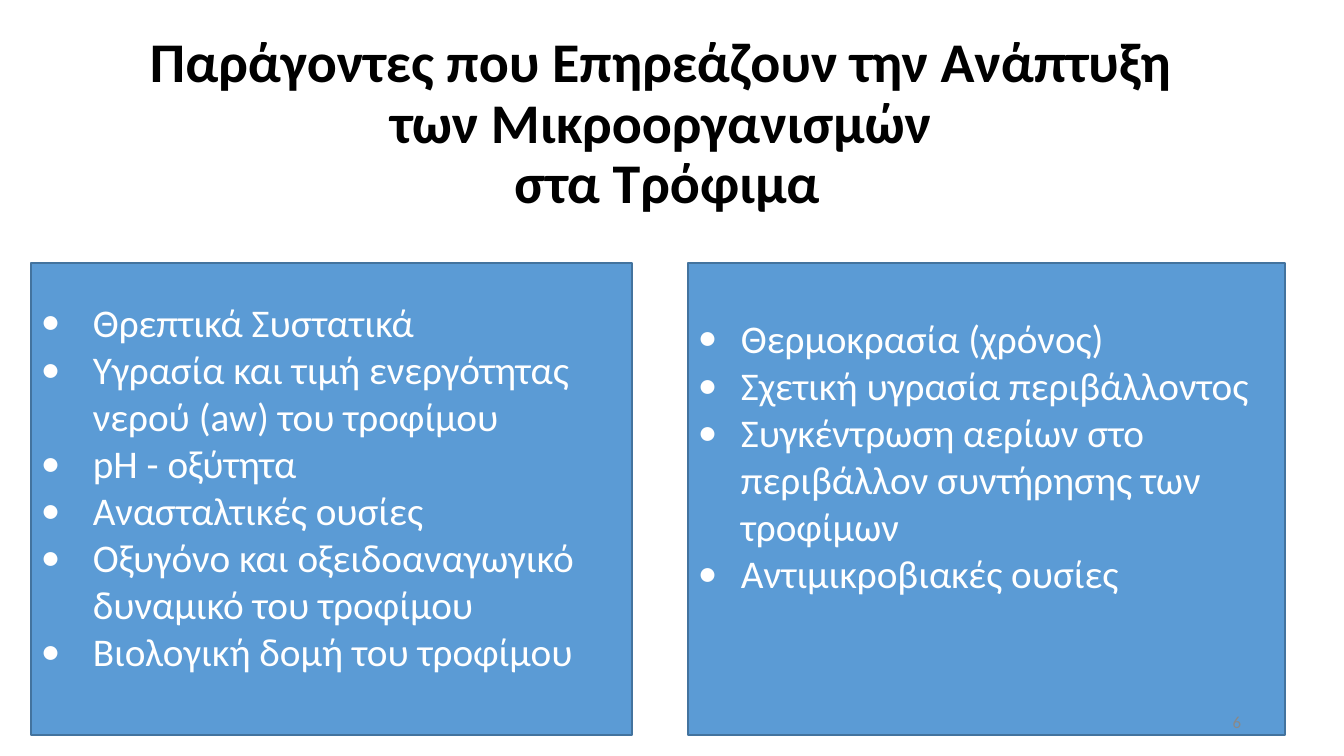
"""Build the slide on factors that affect microbial growth in foods."""
from lxml.etree import SubElement
from pptx import Presentation
from pptx.dml.color import RGBColor
from pptx.enum.shapes import MSO_SHAPE
from pptx.enum.text import MSO_ANCHOR, PP_ALIGN
from pptx.oxml.ns import qn
from pptx.util import Pt

PX = 9144000 // 1008
FONT = "Calibri"
COLORS = {"title": "000000", "panel": "5B9BD5", "edge": "43739E",
          "factor": "FFFFFF", "number": "898989"}

TITLE = ("Παράγοντες που Επηρεάζουν την Ανάπτυξη \v"
         "των Μικροοργανισμών \vστα Τρόφιμα")
PAGE_NUMBER = "6"
PANEL_TOP, PANEL_HEIGHT = 263, 472
PANELS = [
    {"left": 31, "width": 601, "inset": 35, "indent": 52, "factors": [
        "Θρεπτικά Συστατικά",
        "Υγρασία και τιμή ενεργότητας\vνερού (aw) του τροφίμου",
        "pH - οξύτητα",
        "Ανασταλτικές ουσίες",
        "Οξυγόνο και οξειδοαναγωγικό\vδυναμικό του τροφίμου",
        "Βιολογική δομή του τροφίμου"]},
    {"left": 688, "width": 597, "inset": 51, "indent": 43, "factors": [
        "Θερμοκρασία (χρόνος)",
        "Σχετική υγρασία περιβάλλοντος",
        "Συγκέντρωση αερίων στο\vπεριβάλλον συντήρησης των\vτροφίμων",
        "Αντιμικροβιακές ουσίες"]},
]


def color(name):
    return RGBColor.from_string(COLORS[name])


def style(paragraph, size, name, align, bold=False):
    paragraph.alignment = align
    font = paragraph.font
    font.name, font.size, font.bold = FONT, Pt(size), bold
    font.color.rgb = color(name)
    for run in paragraph.runs:
        run.font.name, run.font.size, run.font.bold = FONT, Pt(size), bold
        run.font.color.rgb = color(name)


def add_label(slide, box, text, size, name, align, anchor, bold=False):
    label = slide.shapes.add_textbox(*(v * PX for v in box))
    frame = label.text_frame
    frame.word_wrap = True
    frame.vertical_anchor = anchor
    frame.text = text
    style(frame.paragraphs[0], size, name, align, bold)
    return frame.paragraphs[0]


def add_bullet(paragraph, indent):
    props = paragraph._p.get_or_add_pPr()
    props.set("marL", str(indent * PX))
    props.set("indent", str(-indent * PX))
    SubElement(props, qn("a:buFont")).set("typeface", FONT)
    SubElement(props, qn("a:buChar")).set("char", "•")


def add_panel(slide, panel):
    box = (panel["left"], PANEL_TOP, panel["width"], PANEL_HEIGHT)
    rectangle = slide.shapes.add_shape(MSO_SHAPE.RECTANGLE, *(v * PX for v in box))
    rectangle.shadow.inherit = False
    rectangle.fill.solid()
    rectangle.fill.fore_color.rgb = color("panel")
    rectangle.line.color.rgb = color("edge")
    rectangle.line.width = Pt(1)
    frame = rectangle.text_frame
    frame.word_wrap = True
    frame.vertical_anchor = MSO_ANCHOR.TOP
    frame.margin_top = panel["inset"] * PX
    frame.text = "\n".join(panel["factors"])
    for paragraph in frame.paragraphs:
        add_bullet(paragraph, panel["indent"])
        style(paragraph, 28, "factor", PP_ALIGN.LEFT)


def main():
    deck = Presentation()
    deck.slide_width, deck.slide_height = 1344 * PX, 756 * PX
    slide = deck.slides.add_slide(deck.slide_layouts[6])
    title = add_label(slide, (31, 24, 1272, 197), TITLE, 40, "title",
                      PP_ALIGN.CENTER, MSO_ANCHOR.BOTTOM, True)
    title.line_spacing = 0.9
    for panel in PANELS:
        add_panel(slide, panel)
    add_label(slide, (949, 702, 302, 40), PAGE_NUMBER, 12, "number",
              PP_ALIGN.RIGHT, MSO_ANCHOR.MIDDLE)
    deck.save("out.pptx")


if __name__ == "__main__":
    main()
